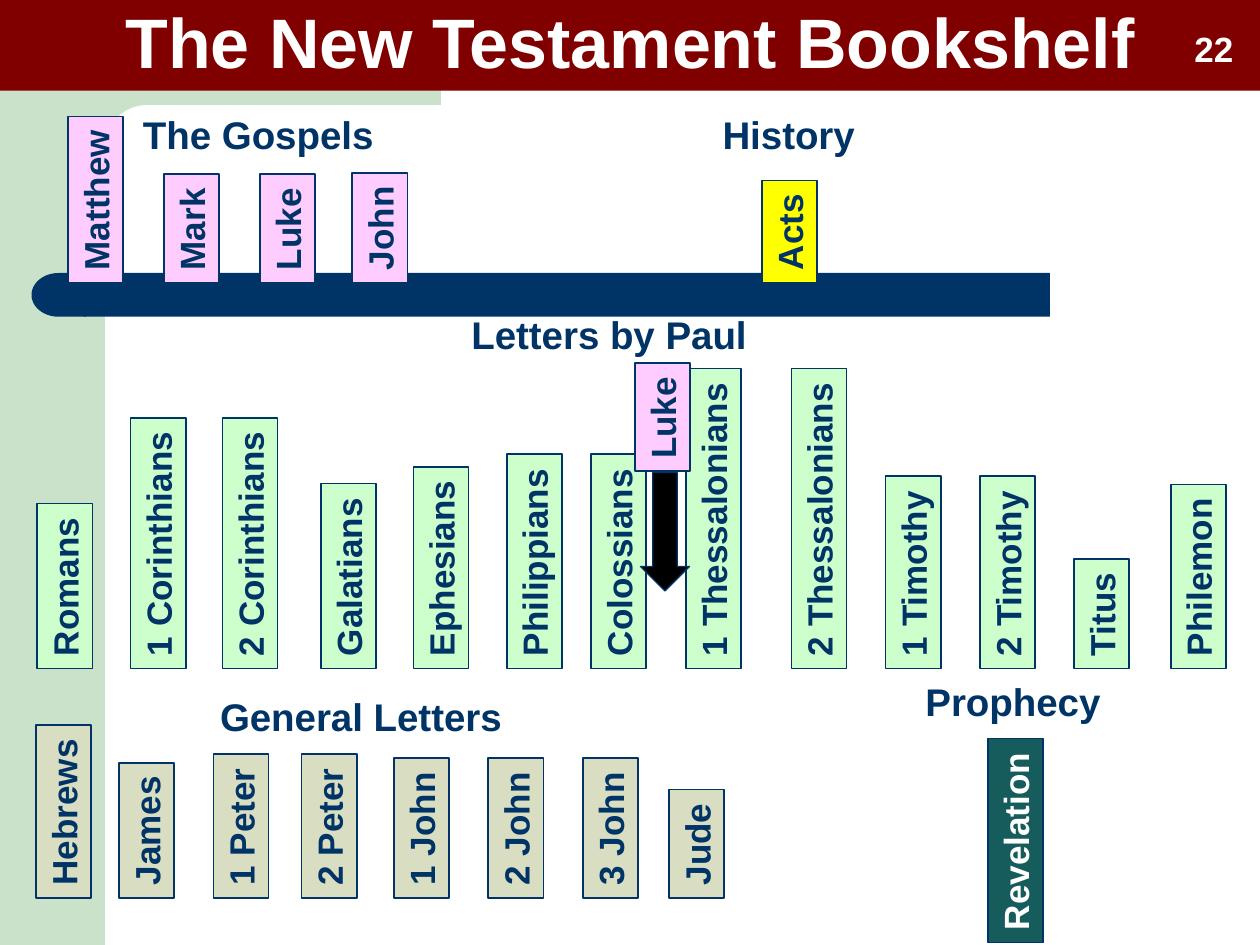
from pptx import Presentation
from pptx.dml.color import RGBColor
from pptx.enum.shapes import MSO_SHAPE
from pptx.enum.text import MSO_ANCHOR, MSO_AUTO_SIZE, PP_ALIGN
from pptx.util import Pt

RECTANGLE = MSO_SHAPE.RECTANGLE
ROUNDED = MSO_SHAPE.ROUNDED_RECTANGLE
DELAY = MSO_SHAPE.FLOWCHART_DELAY
DOWN_ARROW = MSO_SHAPE.DOWN_ARROW
TOP, MIDDLE = MSO_ANCHOR.TOP, MSO_ANCHOR.MIDDLE
LEFT, CENTER = PP_ALIGN.LEFT, PP_ALIGN.CENTER
NO_FIT, GROW = MSO_AUTO_SIZE.NONE, MSO_AUTO_SIZE.SHAPE_TO_FIT_TEXT

COLORS = {
    "navy": "003366", "white": "FFFFFF", "black": "000000",
    "sage": "CAE2CA", "maroon": "800000", "pink": "FFCCFF",
    "yellow": "FFFF00", "mint": "CCFFCC", "khaki": "D9DDC1", "teal": "175C5C",
}
BOOK_THICKNESS = 31.5

GOSPELS = [("Matthew", 54.7, 95), ("Mark", 109.4, 61.9),
           ("Luke", 164.2, 61.9), ("John", 217.1, 62.6)]
PAUL = [("Romans", 37.1, 94.3), ("1 Corinthians", 90.4, 143.3),
        ("2 Corinthians", 142.9, 143.3), ("Galatians", 199.1, 105.8),
        ("Ephesians", 252, 115.2), ("Philippians", 305.3, 122.4),
        ("Colossians", 353.5, 122.4), ("1 Thessalonians", 407.7, 171.4),
        ("2 Thessalonians", 468, 171.4), ("1 Timothy", 521.8, 110.2),
        ("2 Timothy", 575.8, 110.2), ("Titus", 629.6, 62.6),
        ("Philemon", 684.7, 105.1)]
GENERAL = [("Hebrews", 36.4, 98.6), ("James", 83.9, 77),
           ("1 Peter", 137.7, 82.1), ("2 Peter", 188.1, 82.1),
           ("1 John", 240.8, 79.9), ("2 John", 294.8, 79.9),
           ("3 John", 348.8, 79.9), ("Jude", 398.2, 61.9)]
SHELVES = [("pink", 161.5, GOSPELS), ("yellow", 161.5, [("Acts", 451.1, 58.3)]),
           ("mint", 382, PAUL), ("khaki", 513, GENERAL)]
LABELS = [("The Gospels", 71.3, 59.8, 152.6), ("History", 390.2, 59.8, 121),
          ("Letters by Paul", 180, 174.2, 336.2),
          ("General Letters", 76.3, 392.4, 259.9),
          ("Prophecy", 519.1, 383.8, 119.5)]


class Bookshelf:
    """Draws the shapes, books and labels of a bookshelf slide."""

    def __init__(self, slide, font="Arial"):
        self.slide = slide
        self.font = font

    def color(self, name):
        return RGBColor.from_string(COLORS[name])

    def set_text(self, shape, text, size, color, align=LEFT, anchor=TOP, wrap=False, fit=GROW):
        frame = shape.text_frame
        frame.text = text
        frame.word_wrap = wrap
        frame.auto_size = fit
        frame.vertical_anchor = anchor
        paragraph = frame.paragraphs[0]
        paragraph.alignment = align
        font = paragraph.runs[0].font
        font.name, font.size, font.bold = self.font, Pt(size), True
        font.color.rgb = self.color(color)

    def block(self, kind, left, top, width, height, fill, line_width=0):
        shape = self.slide.shapes.add_shape(kind, Pt(left), Pt(top), Pt(width), Pt(height))
        shape.shadow.inherit = False
        shape.fill.solid()
        shape.fill.fore_color.rgb = self.color(fill)
        if line_width:
            shape.line.color.rgb = self.color("navy")
            shape.line.width = Pt(line_width)
        else:
            shape.line.fill.background()
        return shape

    def book(self, name, center, bottom, length, fill, color="navy"):
        left = center - length / 2
        top = bottom - length / 2 - BOOK_THICKNESS / 2
        shape = self.block(RECTANGLE, left, top, length, BOOK_THICKNESS, fill, 1)
        shape.rotation = 270
        self.set_text(shape, name, 20, color)

    def label(self, text, left, top, width, height=33.8, size=22,
              color="navy", align=CENTER, wrap=True):
        box = self.slide.shapes.add_textbox(Pt(left), Pt(top), Pt(width), Pt(height))
        self.set_text(box, text, size, color, align, wrap=wrap)

    def title(self, text):
        shape = self.block(RECTANGLE, 0, 0, 720, 51.8, "maroon")
        self.set_text(shape, text, 40, "white", CENTER, MIDDLE, True, NO_FIT)
        shape.text_frame.paragraphs[0].line_spacing = 0.9


def main():
    presentation = Presentation()
    presentation.slide_width, presentation.slide_height = Pt(720), Pt(540)
    slide = presentation.slides.add_slide(presentation.slide_layouts[6])
    shelf = Bookshelf(slide)

    shelf.block(RECTANGLE, 0, 0, 60, 540, "sage")
    shelf.block(RECTANGLE, 54, 0, 198, 84, "sage")
    shelf.block(ROUNDED, 60, 60, 402, 48, "white").adjustments[0] = 0.5
    shelf.block(ROUNDED, 48, 156, 552, 25, "navy").adjustments[0] = 0
    shelf.block(DELAY, 18, 156, 31, 25, "navy").rotation = 180

    for fill, bottom, books in SHELVES:
        for name, center, length in books:
            shelf.book(name, center, bottom, length, fill)
    shelf.book("Revelation", 580.3, 538.6, 116.6, "teal", "white")
    for text, left, top, width in LABELS:
        shelf.label(text, left, top, width)

    shelf.title("The New Testament Bookshelf")
    shelf.label("22", 675.4, 12.2, 36.7, 31.5, 20, "white", LEFT, False)
    shelf.book("Luke", 378.5, 269.3, 61.9, "pink")
    shelf.block(DOWN_ARROW, 366, 270, 28, 67.7, "black", 0.75)

    presentation.save("out.pptx")


if __name__ == "__main__":
    main()
